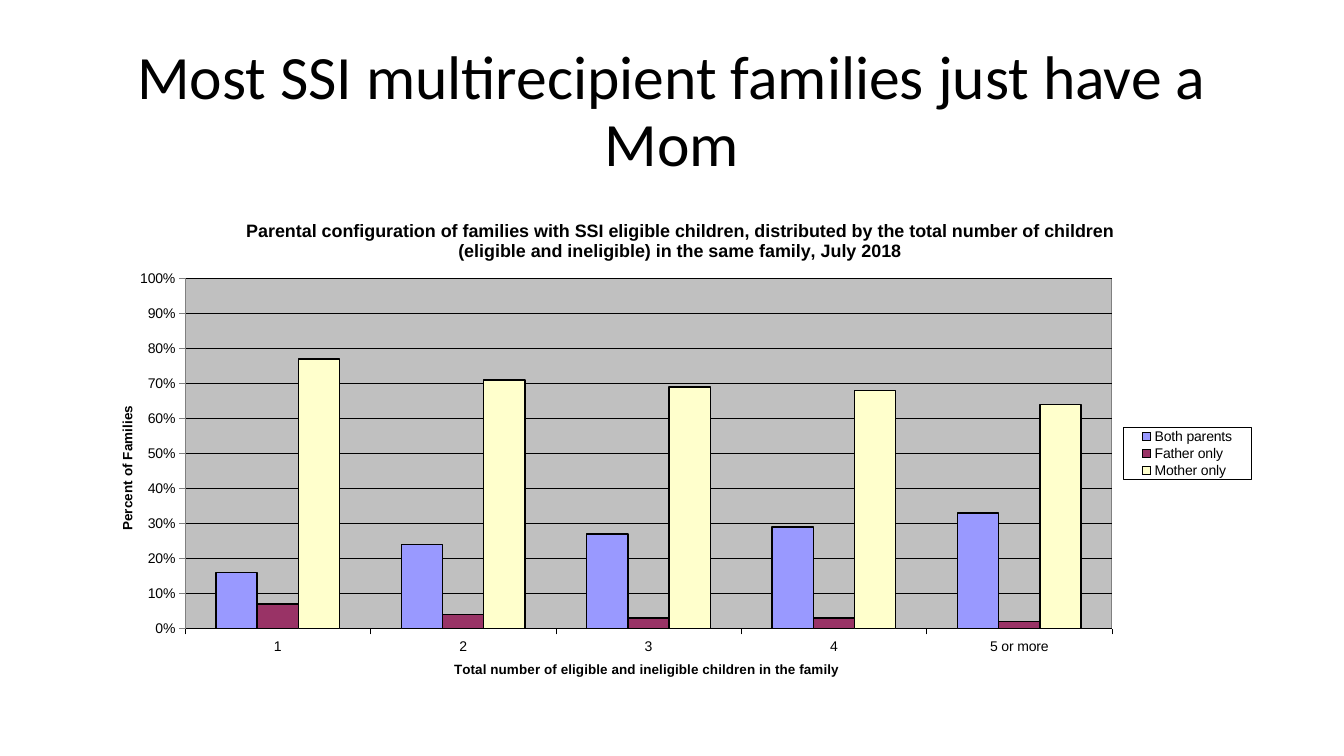
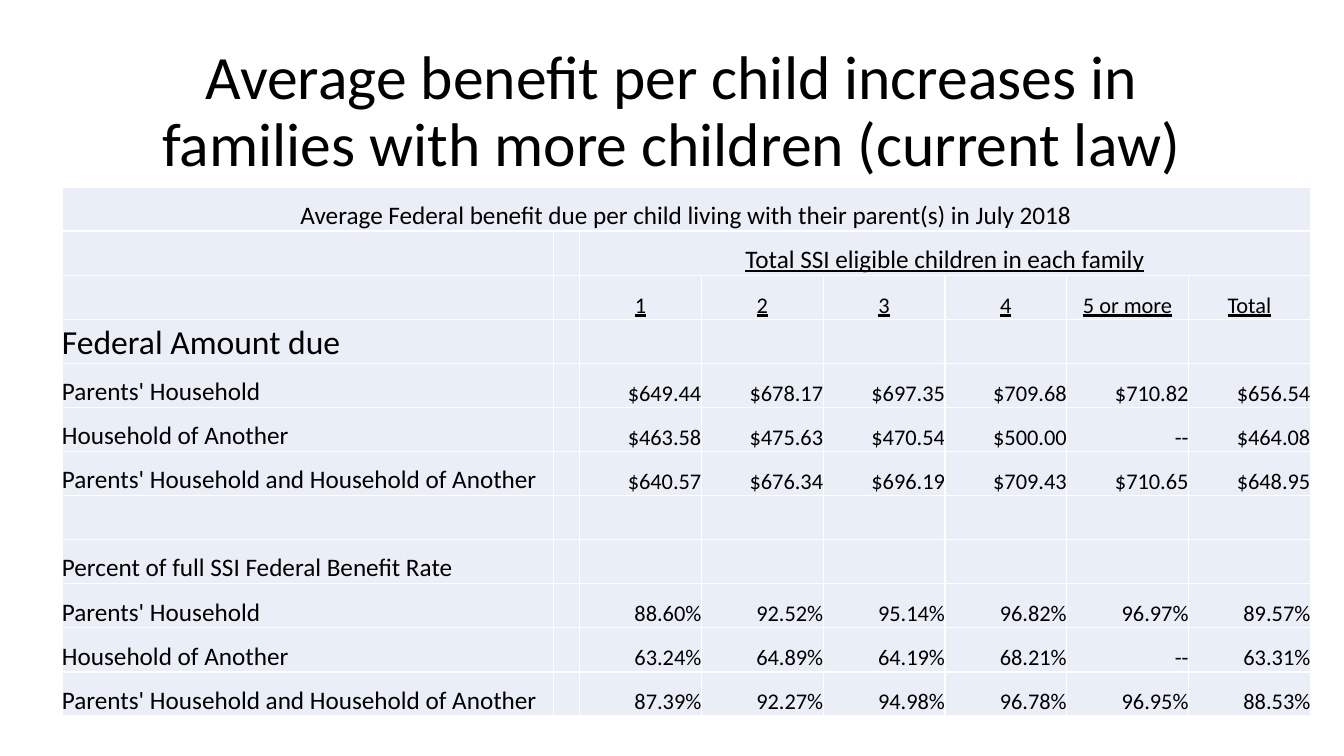
from dataclasses import dataclass

from lxml.etree import SubElement
from pptx import Presentation
from pptx.chart.data import CategoryChartData
from pptx.dml.color import RGBColor
from pptx.enum.chart import XL_CHART_TYPE, XL_LEGEND_POSITION, XL_TICK_MARK
from pptx.enum.text import MSO_ANCHOR, PP_ALIGN
from pptx.oxml import parse_xml
from pptx.oxml.ns import nsdecls, qn
from pptx.util import Emu, Pt

PX = 9525


@dataclass(frozen=True)
class Theme:
    font: str = "Calibri"
    chart_font: str = "Arial"
    ink: str = "000000"
    paper: str = "FFFFFF"
    cell: str = "EAEFF7"
    plot: str = "C0C0C0"
    axis: str = "808080"
    series: tuple = ("9999FF", "993366", "FFFFCC")
    title: int = 44
    heading: int = 24
    label: int = 18
    value: int = 16
    chart_title: float = 12.8
    axis_title: float = 9.6
    chart_text: int = 10


def rgb(code):
    return RGBColor.from_string(code)


def box_format(fill, line):
    return parse_xml(
        f'<c:spPr {nsdecls("c", "a")}><a:solidFill><a:srgbClr val="{fill}"/></a:solidFill>'
        f'<a:ln w="9525"><a:solidFill><a:srgbClr val="{line}"/></a:solidFill></a:ln></c:spPr>')


def set_layout(el, inner=False, **place):
    for old in el.findall(qn("c:layout")):
        el.remove(old)
    layout = parse_xml(f'<c:layout {nsdecls("c")}><c:manualLayout/></c:layout>')
    manual = layout[0]
    if inner:
        SubElement(manual, qn("c:layoutTarget")).set("val", "inner")
    for axis in "xy":
        SubElement(manual, qn(f"c:{axis}Mode")).set("val", "edge")
    for key, share in place.items():
        SubElement(manual, qn(f"c:{key}")).set("val", str(share))
    overlay = el.find(qn("c:overlay"))
    if overlay is None:
        el.insert(0, layout)
    else:
        overlay.addprevious(layout)


class Deck:
    """Builds slides in one shared style."""

    def __init__(self, theme, width, height):
        self.theme = theme
        self.prs = Presentation()
        self.prs.slide_width, self.prs.slide_height = Emu(width * PX), Emu(height * PX)
        self.s = None

    def add_slide(self, title):
        self.s = self.prs.slides.add_slide(self.prs.slide_layouts[6])
        tf = self.s.shapes.add_textbox(*self.at(88, 38, 1104, 139)).text_frame
        tf.word_wrap = True
        tf.vertical_anchor = MSO_ANCHOR.MIDDLE
        p = tf.paragraphs[0]
        p.alignment = PP_ALIGN.CENTER
        p.line_spacing = 0.9
        self.run(p, title, self.theme.title)

    def at(self, *lengths):
        return [Emu(n * PX) for n in lengths]

    def style(self, font, size, name, bold=False):
        font.size, font.name, font.bold = Pt(size), name, bold
        font.color.rgb = rgb(self.theme.ink)

    def run(self, p, text, size, name=None, bold=False, underline=None):
        r = p.add_run()
        r.text = text
        self.style(r.font, size, name or self.theme.font, bold)
        r.font.underline = underline

    def line(self, fmt, color, width):
        fmt.line.color.rgb = rgb(color)
        fmt.line.width = Pt(width)

    def chart_title(self, title, text, size, **place):
        self.run(title.text_frame.paragraphs[0], text, size, self.theme.chart_font, True)
        set_layout(title.element, **place)

    def column_chart(self, at, title, x_title, y_title, cats, series):
        t = self.theme
        data = CategoryChartData(number_format="0%")
        data.categories = cats
        for name, vals in series.items():
            data.add_series(name, vals)
        chart = self.s.shapes.add_chart(
            XL_CHART_TYPE.COLUMN_CLUSTERED, *self.at(*at), data).chart
        self.style(chart.font, t.chart_text, t.chart_font)
        chart.has_title = True
        self.chart_title(chart.chart_title, title, t.chart_title, x=0.13, y=0.03)

        plot = chart.plots[0]
        plot.gap_width, plot.overlap, plot.vary_by_categories = 150, 0, False
        for ser, color in zip(plot.series, t.series):
            ser.format.fill.solid()
            ser.format.fill.fore_color.rgb = rgb(color)
            self.line(ser.format, t.ink, 1)

        cat, val = chart.category_axis, chart.value_axis
        for axis, color in ((cat, t.ink), (val, t.axis)):
            axis.major_tick_mark = XL_TICK_MARK.OUTSIDE
            axis.minor_tick_mark = XL_TICK_MARK.NONE
            self.style(axis.tick_labels.font, t.chart_text, t.chart_font)
            self.line(axis.format, color, 0.25)
        val.minimum_scale, val.maximum_scale, val.major_unit = 0, 1, 0.1
        val.tick_labels.number_format = "0%"
        val.tick_labels.number_format_is_linked = False
        self.line(val.major_gridlines.format, t.ink, 0.25)
        self.chart_title(cat.axis_title, x_title, t.axis_title, x=0.31, y=0.95)
        self.chart_title(val.axis_title, y_title, t.axis_title, x=0.02, y=0.42)
        body = val.axis_title.element.xpath(".//a:bodyPr")[0]
        body.set("rot", "-5400000")
        body.set("vert", "horz")

        chart.has_legend = True
        chart.legend.position = XL_LEGEND_POSITION.RIGHT
        chart.legend.include_in_layout = False
        self.style(chart.legend.font, t.chart_text, t.chart_font)
        legend = chart.element.xpath("c:chart/c:legend")[0]
        set_layout(legend, x=0.89, y=0.47, w=0.11, h=0.11)
        legend.find(qn("c:overlay")).addnext(box_format(t.paper, t.ink))
        area = chart.element.xpath("c:chart/c:plotArea")[0]
        set_layout(area, inner=True, x=0.08, y=0.16, w=0.8, h=0.73)
        area.append(box_format(t.plot, t.axis))

    def cell_text(self, cell, text, size, align, underline=None):
        p = cell.text_frame.paragraphs[0]
        p.alignment = align
        self.run(p, text, size, underline=underline)

    def benefit_table(self, left, top, widths, row_height, caption, group, heads, rows):
        t = self.theme
        count = len(rows) + 3
        frame = self.s.shapes.add_table(
            count, len(widths), *self.at(left, top, sum(widths), row_height * count))
        table = frame.table
        table.first_row = table.horz_banding = False
        for col, width in zip(table.columns, widths):
            col.width = Emu(width * PX)
        for row in table.rows:
            row.height = Emu(row_height * PX)
        for cell in table.iter_cells():
            cell.margin_left = cell.margin_right = cell.margin_top = cell.margin_bottom = 0
            cell.vertical_anchor = MSO_ANCHOR.BOTTOM
            cell.fill.solid()
            cell.fill.fore_color.rgb = rgb(t.cell)
        for props in frame.element.xpath(".//a:tcPr"):
            for i, side in enumerate("LRTB"):
                props.insert(i, parse_xml(
                    f'<a:ln{side} {nsdecls("a")} w="12700"><a:solidFill>'
                    f'<a:srgbClr val="{t.paper}"/></a:solidFill></a:ln{side}>'))

        last = len(widths) - 1
        table.cell(0, 0).merge(table.cell(0, last))
        table.cell(1, 2).merge(table.cell(1, last))
        self.cell_text(table.cell(0, 0), caption, t.label, PP_ALIGN.CENTER)
        self.cell_text(table.cell(1, 2), group, t.label, PP_ALIGN.CENTER, True)
        for c, head in enumerate(heads, 2):
            self.cell_text(table.cell(2, c), head, t.value, PP_ALIGN.CENTER, True)
        for r, (label, size, values) in enumerate(rows, 3):
            if label:
                self.cell_text(table.cell(r, 0), label, size, PP_ALIGN.LEFT)
            for c, value in enumerate(values.split(), 2):
                self.cell_text(table.cell(r, c), value, t.value, PP_ALIGN.RIGHT)


def main():
    theme = Theme()
    deck = Deck(theme, 1280, 720)

    deck.add_slide("Most SSI multirecipient families just have a Mom")
    deck.column_chart(
        (88, 192, 1104, 457),
        "Parental configuration of families with SSI eligible children, distributed by the "
        "total number of children (eligible and ineligible) in the same family, July 2018",
        "Total number of eligible and ineligible children in the family",
        "Percent of Families",
        ["1", "2", "3", "4", "5 or more"],
        {"Both parents": (0.16, 0.24, 0.27, 0.29, 0.33),
         "Father only": (0.07, 0.04, 0.03, 0.03, 0.02),
         "Mother only": (0.77, 0.71, 0.69, 0.68, 0.64)})

    deck.add_slide("Average benefit per child increases in families with more children (current law)")
    homes = ("Parents' Household", "Household of Another",
             "Parents' Household and Household of Another")
    amounts = ("$649.44 $678.17 $697.35 $709.68 $710.82 $656.54",
               "$463.58 $475.63 $470.54 $500.00 -- $464.08",
               "$640.57 $676.34 $696.19 $709.43 $710.65 $648.95")
    percents = ("88.60% 92.52% 95.14% 96.82% 96.97% 89.57%",
                "63.24% 64.89% 64.19% 68.21% -- 63.31%",
                "87.39% 92.27% 94.98% 96.78% 96.95% 88.53%")
    rows = [("Federal Amount due", theme.heading, ""),
            *((home, theme.label, vals) for home, vals in zip(homes, amounts)),
            ("", theme.label, ""),
            ("Percent of full SSI Federal Benefit Rate", theme.label, ""),
            *((home, theme.label, vals) for home, vals in zip(homes, percents))]
    deck.benefit_table(
        59, 178, [468, 25] + [116] * 6, 42,
        "Average Federal benefit due per child living with their parent(s) in July 2018",
        "Total SSI eligible children in each family",
        ["1", "2", "3", "4", "5 or more", "Total"], rows)

    deck.prs.save("out.pptx")


if __name__ == "__main__":
    main()
